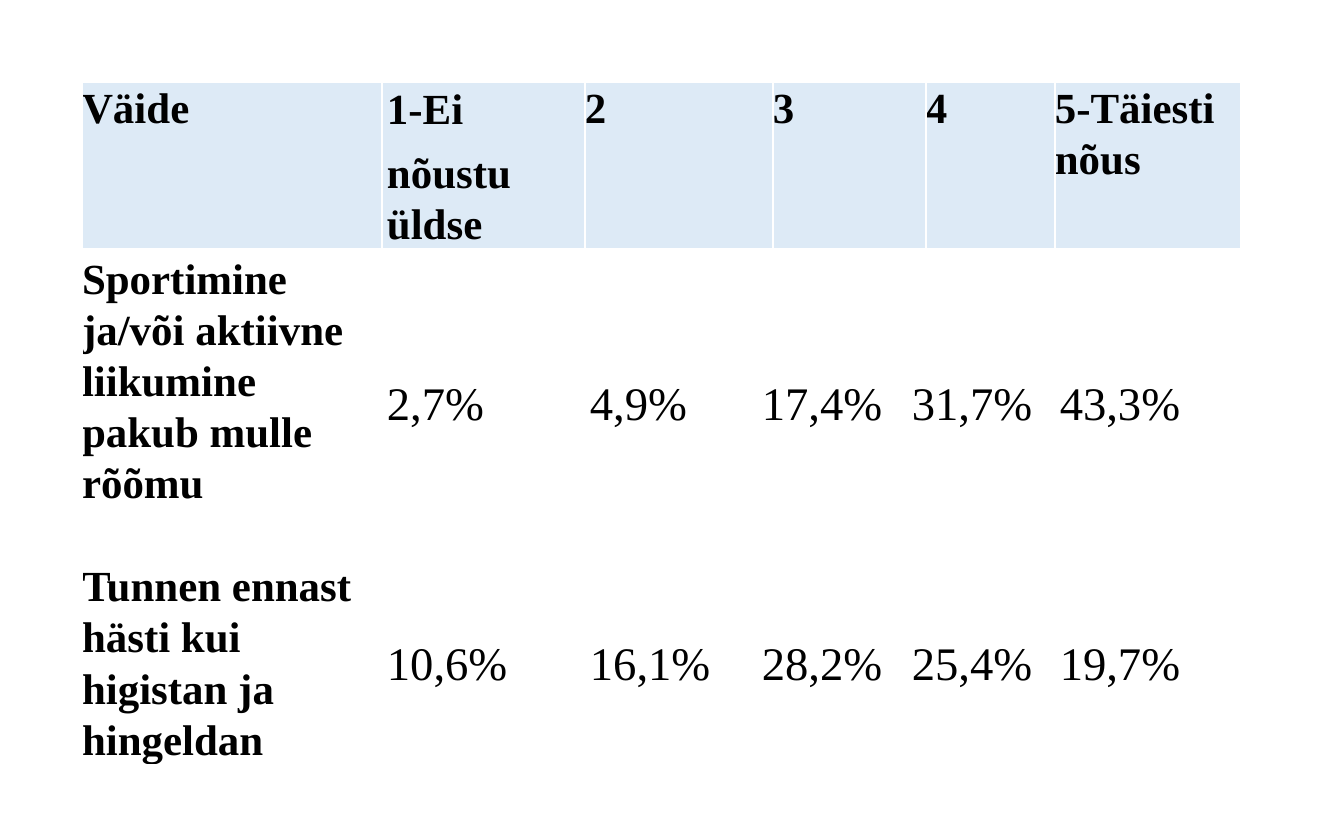
"""Build a slide with a table of survey answers on enjoyment of sport."""
from dataclasses import dataclass

from pptx import Presentation
from pptx.dml.color import RGBColor
from pptx.enum.text import MSO_ANCHOR
from pptx.table import Table, _Cell
from pptx.util import Emu, Pt

TOP, MIDDLE, BOTTOM = MSO_ANCHOR.TOP, MSO_ANCHOR.MIDDLE, MSO_ANCHOR.BOTTOM
BLACK = RGBColor(0x00, 0x00, 0x00)
WHITE = RGBColor(0xFF, 0xFF, 0xFF)
HEADER_BLUE = RGBColor(0xDD, 0xEA, 0xF6)
FONT = "Times New Roman"
EMU_PER_PX = 914400 / 134.4

COLUMN_WIDTHS = (300, 203, 172, 16, 134, 19, 129, 186)
ROW_HEIGHTS = (165, 311, 204)
HEADER_STARTS = (0, 1, 2, 4, 6, 7)
ANSWER_STARTS = (0, 1, 2, 3, 5, 7)


@dataclass(frozen=True)
class CellStyle:
    """Text and box formatting shared by a kind of cell."""

    size: int
    bold: bool
    fill: RGBColor
    anchor: MSO_ANCHOR = TOP
    side: int = 0
    top: int = 0
    bottom: int = 0
    spacing: float = 1.07


@dataclass(frozen=True)
class SurveyRow:
    """Texts of one row, the columns they start in and their styles."""

    texts: tuple[str, ...]
    starts: tuple[int, ...]
    first: CellStyle
    second: CellStyle
    others: CellStyle


HEADER = CellStyle(23, True, HEADER_BLUE)
HEADER_INSET = CellStyle(23, True, HEADER_BLUE, side=5, top=1)
STATEMENT = CellStyle(23, True, WHITE)
STATEMENT_LOW = CellStyle(23, True, WHITE, BOTTOM, bottom=52)
SHARE = CellStyle(25, False, WHITE, MIDDLE, side=5, top=1)
SHARE_SINGLE = CellStyle(25, False, WHITE, MIDDLE, side=5, top=1, spacing=1.0)

SURVEY = (
    SurveyRow(("Väide", "1-Ei\nnõustu üldse", "2", "3", "4", "5-Täiesti nõus"),
              HEADER_STARTS, HEADER, HEADER_INSET, HEADER),
    SurveyRow(("Sportimine ja/või aktiivne liikumine pakub mulle rõõmu",
               "2,7%", "4,9%", "17,4%", "31,7%", "43,3%"),
              ANSWER_STARTS, STATEMENT_LOW, SHARE_SINGLE, SHARE_SINGLE),
    SurveyRow(("Tunnen ennast hästi kui higistan ja hingeldan",
               "10,6%", "16,1%", "28,2%", "25,4%", "19,7%"),
              ANSWER_STARTS, STATEMENT, SHARE, SHARE),
)


def px(length: int) -> Emu:
    """Turn pixels into EMU."""
    return Emu(round(length * EMU_PER_PX))


def fill_cell(cell: _Cell, text: str, style: CellStyle) -> None:
    """Write and format one cell."""
    cell.fill.solid()
    cell.fill.fore_color.rgb = style.fill
    cell.vertical_anchor = style.anchor
    cell.margin_left = cell.margin_right = px(style.side)
    cell.margin_top, cell.margin_bottom = px(style.top), px(style.bottom)
    cell.text_frame.text = text
    for index, paragraph in enumerate(cell.text_frame.paragraphs):
        paragraph.line_spacing = style.spacing
        if index:
            paragraph.space_before = Pt(7)
        for run in paragraph.runs:
            run.font.name = FONT
            run.font.size = Pt(style.size)
            run.font.bold = style.bold
            run.font.color.rgb = BLACK


def fill_row(table: Table, row_index: int, row: SurveyRow) -> None:
    """Merge and fill the cells of one row."""
    ends = (*row.starts[1:], len(COLUMN_WIDTHS))
    styles = (row.first, row.second, *[row.others] * (len(row.texts) - 2))
    for text, start, end, style in zip(row.texts, row.starts, ends, styles):
        cell = table.cell(row_index, start)
        if end - start > 1:
            cell.merge(table.cell(row_index, end - 1))
        fill_cell(cell, text, style)


def main() -> None:
    """Build and save the slide."""
    presentation = Presentation()
    presentation.slide_width, presentation.slide_height = px(1344), px(840)
    slide = presentation.slides.add_slide(presentation.slide_layouts[6])
    table = slide.shapes.add_table(
        len(ROW_HEIGHTS), len(COLUMN_WIDTHS), px(82), px(82),
        px(sum(COLUMN_WIDTHS)), px(sum(ROW_HEIGHTS))).table
    for column, width in zip(table.columns, COLUMN_WIDTHS):
        column.width = px(width)
    for table_row, height in zip(table.rows, ROW_HEIGHTS):
        table_row.height = px(height)
    for row_index, row in enumerate(SURVEY):
        fill_row(table, row_index, row)
    presentation.save("out.pptx")


if __name__ == "__main__":
    main()
